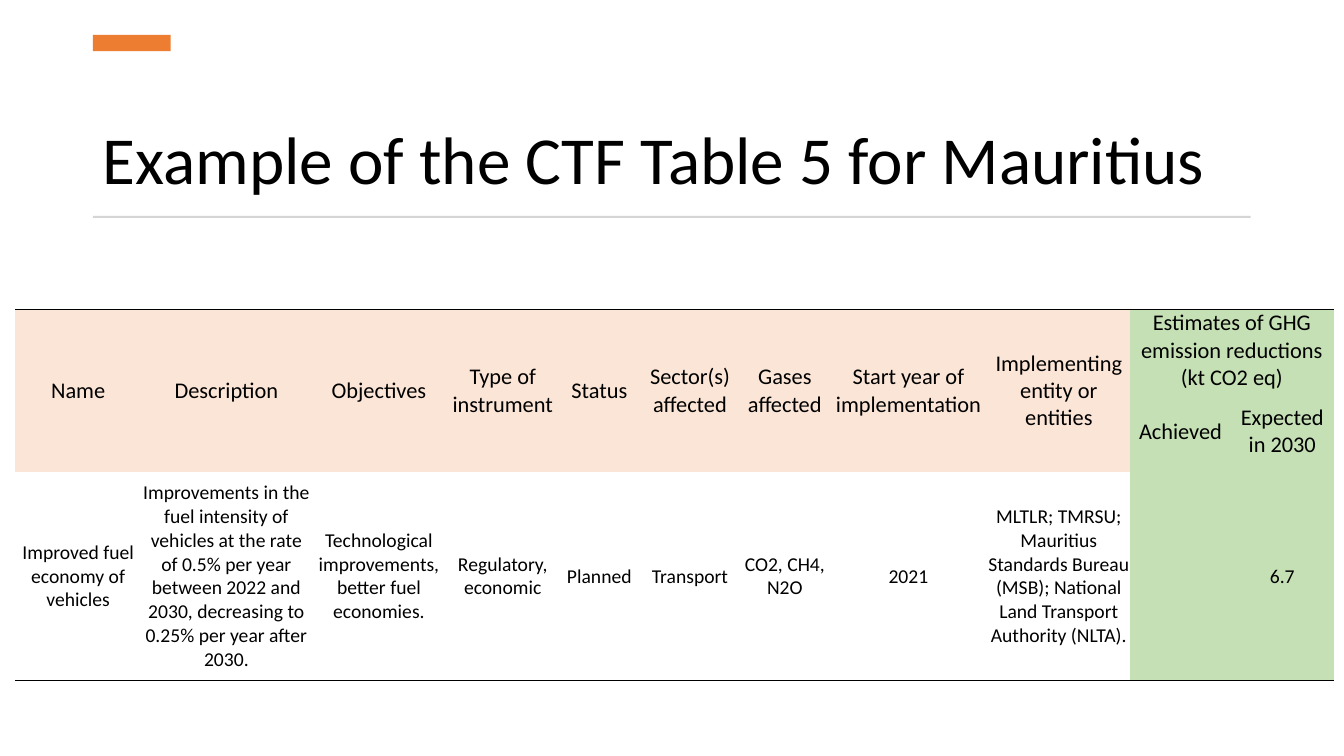
from dataclasses import dataclass

from lxml import etree
from pptx import Presentation
from pptx.dml.color import RGBColor
from pptx.enum.shapes import MSO_SHAPE
from pptx.enum.text import MSO_ANCHOR, PP_ALIGN
from pptx.oxml.ns import qn
from pptx.util import Cm, Pt

RECTANGLE = MSO_SHAPE.RECTANGLE
LEFT, CENTER = PP_ALIGN.LEFT, PP_ALIGN.CENTER
MIDDLE, BOTTOM = MSO_ANCHOR.MIDDLE, MSO_ANCHOR.BOTTOM
NO_STYLE_NO_GRID = "{2D5ABB26-0587-4C30-8999-92F81FD0307C}"


@dataclass(frozen=True)
class Theme:
    font: str = "Calibri"
    text: str = "000000"
    accent: str = "ED7D31"
    rule: str = "D5D5D5"
    header: str = "FBE5D6"
    estimate: str = "C5E0B4"
    title_size: int = 48
    header_size: int = 16
    body_size: int = 14
    border_width: int = 1


# Column width in cm, heading, value for the measure
MEASURE_COLUMNS = [
    (3.18, "Name", "Improved fuel economy of vehicles"),
    (4.29, "Description",
     "Improvements in the fuel intensity of vehicles at the rate of 0.5% per year "
     "between 2022 and 2030, decreasing to 0.25% per year after 2030."),
    (3.4, "Objectives", "Technological improvements, better fuel economies."),
    (2.84, "Type of instrument", "Regulatory, economic"),
    (2.03, "Status", "Planned"),
    (2.54, "Sector(s) affected", "Transport"),
    (2.24, "Gases affected", "CO2, CH4, N2O"),
    (3.99, "Start year of implementation", "2021"),
    (3.59, "Implementing entity or entities",
     "MLTLR; TMRSU; Mauritius Standards Bureau (MSB); "
     "National Land Transport Authority (NLTA)."),
]
ESTIMATE_COLUMNS = [(2.54, "Achieved", ""), (2.59, "Expected in 2030", "6.7")]
ESTIMATE_HEADING = "Estimates of GHG emission reductions\n(kt CO2 eq)"
ROW_HEIGHTS = [2.06, 1.42, 5.26]


def write_text(frame, text, *, font, size, color, align=LEFT, line_spacing=None):
    """Fill a text frame, one paragraph per line of text."""
    frame.word_wrap = True
    for index, line in enumerate(text.split("\n")):
        paragraph = frame.add_paragraph() if index else frame.paragraphs[0]
        paragraph.alignment = align
        paragraph.line_spacing = line_spacing
        paragraph.font.size = Pt(size)
        run = paragraph.add_run()
        run.text = line
        run.font.name = font
        run.font.size = Pt(size)
        run.font.color.rgb = RGBColor.from_string(color)


class SlideBuilder:
    def __init__(self, slide, theme):
        self.slide = slide
        self.theme = theme

    def title(self, text, left, top, width, height):
        box = self.slide.shapes.add_textbox(Cm(left), Cm(top), Cm(width), Cm(height))
        box.text_frame.vertical_anchor = BOTTOM
        write_text(box.text_frame, text, font=self.theme.font, size=self.theme.title_size,
                   color=self.theme.text, line_spacing=0.9)

    def bar(self, color, left, top, width, height):
        shape = self.slide.shapes.add_shape(
            RECTANGLE, Cm(left), Cm(top), Cm(width), Cm(height))
        shape.shadow.inherit = False
        shape.fill.solid()
        shape.fill.fore_color.rgb = RGBColor.from_string(color)
        shape.line.fill.background()

    def table(self, left, top, widths, heights):
        frame = self.slide.shapes.add_table(
            len(heights), len(widths), Cm(left), Cm(top), Cm(sum(widths)), Cm(sum(heights)))
        table = frame.table
        table.first_row = table.horz_banding = False
        table._tbl.tblPr.find(qn("a:tableStyleId")).text = NO_STYLE_NO_GRID
        for column, width in zip(table.columns, widths):
            column.width = Cm(width)
        for row, height in zip(table.rows, heights):
            row.height = Cm(height)
        return table

    def cell(self, cell, text, size, fill=None):
        cell.margin_left = cell.margin_right = cell.margin_top = cell.margin_bottom = 0
        cell.vertical_anchor = MIDDLE
        if fill:
            cell.fill.solid()
            cell.fill.fore_color.rgb = RGBColor.from_string(fill)
        else:
            cell.fill.background()
        if text:
            write_text(cell.text_frame, text, font=self.theme.font, size=size,
                       color=self.theme.text, align=CENTER)

    def border(self, cell, side):
        """Draw a cell edge; side is a:lnT or a:lnB."""
        line = etree.Element(qn(side), w=str(Pt(self.theme.border_width)))
        fill = etree.SubElement(line, qn("a:solidFill"))
        etree.SubElement(fill, qn("a:srgbClr"), val=self.theme.text)
        cell._tc.get_or_add_tcPr().insert(0, line)


def add_measures_table(builder):
    theme = builder.theme
    columns = MEASURE_COLUMNS + ESTIMATE_COLUMNS
    first_estimate = len(MEASURE_COLUMNS)
    table = builder.table(0.38, 7.8, [width for width, _, _ in columns], ROW_HEIGHTS)

    # Headings and values
    for index, (_, heading, value) in enumerate(columns):
        is_estimate = index >= first_estimate
        heading_row = 1 if is_estimate else 0
        builder.cell(table.cell(heading_row, index), heading, theme.header_size,
                     theme.estimate if is_estimate else theme.header)
        builder.cell(table.cell(2, index), value, theme.body_size,
                     theme.estimate if is_estimate else None)
        if not is_estimate:
            table.cell(0, index).merge(table.cell(1, index))

    # Heading over both estimate columns
    builder.cell(table.cell(0, first_estimate), ESTIMATE_HEADING,
                 theme.header_size, theme.estimate)
    table.cell(0, first_estimate).merge(table.cell(0, len(columns) - 1))

    # Outer lines
    for index in range(len(columns)):
        builder.border(table.cell(0, index), "a:lnT")
        builder.border(table.cell(2, index), "a:lnB")


def main():
    presentation = Presentation()
    presentation.slide_width, presentation.slide_height = Cm(33.87), Cm(19.05)
    slide = presentation.slides.add_slide(presentation.slide_layouts[6])
    theme = Theme()
    builder = SlideBuilder(slide, theme)

    # Title with accent and rule
    builder.title("Example of the CTF Table 5 for Mauritius", 2.34, 1.91, 29.18, 3.23)
    builder.bar(theme.accent, 2.34, 0.88, 1.96, 0.41)
    builder.bar(theme.rule, 2.34, 5.44, 29.18, 0.05)

    # Table of mitigation measures
    add_measures_table(builder)
    presentation.save("out.pptx")


if __name__ == "__main__":
    main()
